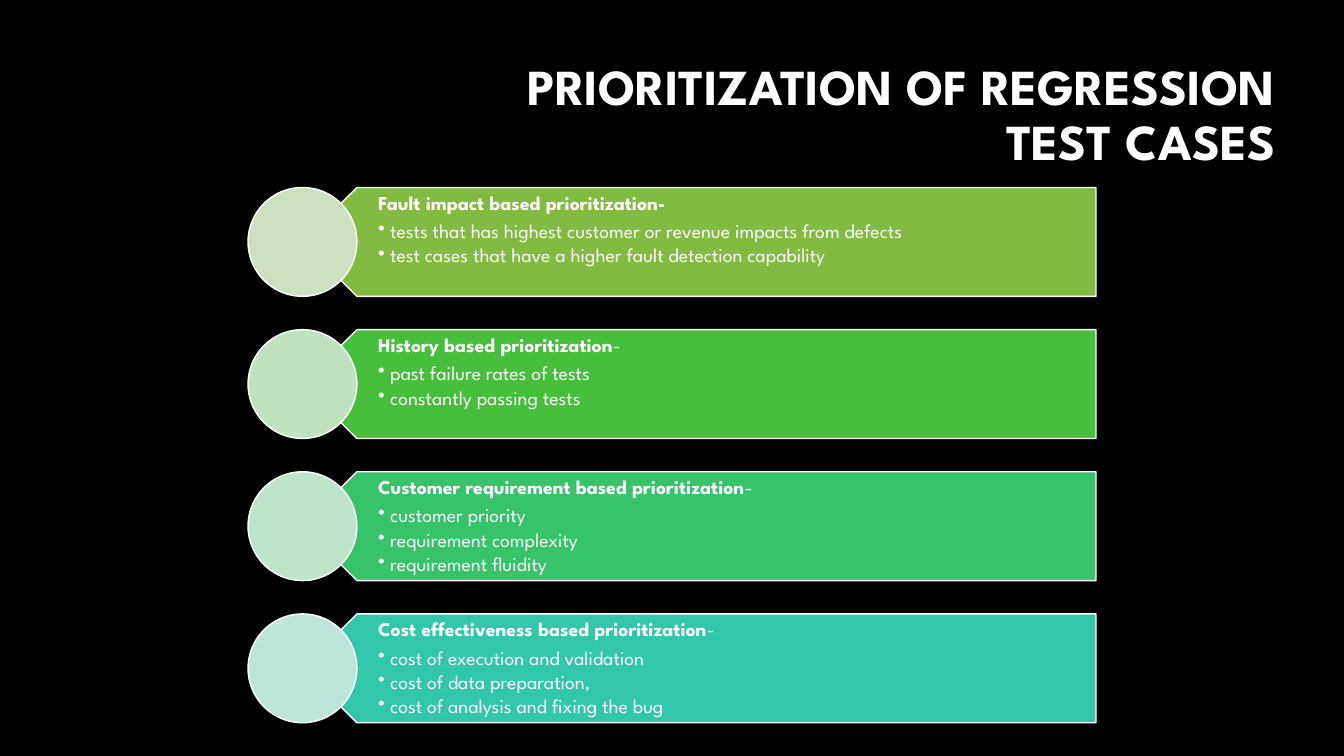
from lxml.etree import SubElement
from pptx import Presentation
from pptx.dml.color import RGBColor
from pptx.enum.shapes import MSO_SHAPE as Shape
from pptx.enum.text import MSO_ANCHOR as Anchor, PP_ALIGN as Align
from pptx.oxml.ns import qn
from pptx.util import Inches, Pt

FONT = "League Spartan"
WHITE = "FFFFFF"
FIRST_ROW, ROW_PITCH, ROW_HEIGHT = 1.86, 1.41, 1.08
CIRCLE_LEFT = 2.46
BAND_LEFT, BAND_RIGHT = CIRCLE_LEFT + ROW_HEIGHT / 2, 10.87
TEXT_LEFT = 3.27

STRATEGIES = [
    ("81BB42", "CDE0C0", ("Fault impact based prioritization-", ""), [
        "tests that has highest customer or revenue impacts from defects",
        "test cases that have a higher fault detection capability"]),
    ("47BF3D", "C0E2C0", ("History based prioritization", "-"), [
        "past failure rates of tests",
        "constantly passing tests"]),
    ("37C369", "BFE4CC", ("Customer requirement based prioritization", "-"), [
        "customer priority",
        "requirement complexity",
        "requirement fluidity"]),
    ("32C7A9", "BEE5DA", ("Cost effectiveness based prioritization", "-"), [
        "cost of execution and validation",
        "cost of data preparation,",
        "cost of analysis and fixing the bug"]),
]


def paint(fill, color):
    fill.solid()
    fill.fore_color.rgb = RGBColor.from_string(color)


def add_outlined(slide, kind, left, top, width, color):
    outlined = slide.shapes.add_shape(
        kind, Inches(left), Inches(top), Inches(width), Inches(ROW_HEIGHT))
    outlined.shadow.inherit = False
    paint(outlined.fill, color)
    paint(outlined.line.fill, WHITE)
    outlined.line.width = Pt(1)
    return outlined


def add_text_frame(slide, left, top, width, height, insets, anchor):
    box = slide.shapes.add_textbox(*map(Inches, (left, top, width, height)))
    frame = box.text_frame
    frame.word_wrap = True
    frame.vertical_anchor = anchor
    (frame.margin_left, frame.margin_top,
     frame.margin_right, frame.margin_bottom) = map(Inches, insets)
    return frame


def style_run(run, size, bold):
    run.font.name = FONT
    run.font.size = Pt(size)
    run.font.bold = bold
    paint(run.font.fill, WHITE)


def add_bullet(paragraph):
    paragraph.level = 1
    properties = paragraph._p.get_or_add_pPr()
    properties.set("marL", str(Inches(0.12)))
    properties.set("indent", str(-Inches(0.12)))
    SubElement(properties, qn("a:buChar")).set("char", "•")


def add_title(slide, wording):
    frame = add_text_frame(slide, 3.33, 0.72, 9.42, 1.41,
                           (1.4, 0.05, 0.1, 0.58), Anchor.MIDDLE)
    title = frame.paragraphs[0]
    title.text = wording
    title.alignment = Align.RIGHT
    title.line_spacing = 0.9
    style_run(title.runs[0], 36, True)


def add_details(slide, top, heading, points):
    frame = add_text_frame(slide, TEXT_LEFT, top, BAND_RIGHT - TEXT_LEFT,
                           ROW_HEIGHT, (0.48, 0.06, 0.11, 0.06), Anchor.TOP)
    name, dash = heading
    frame.text = "\n".join([name, *points])
    for index, paragraph in enumerate(frame.paragraphs):
        is_heading = index == 0
        paragraph.line_spacing = 0.9
        paragraph.space_after = Pt(5 if is_heading else 2.2)
        if not is_heading:
            add_bullet(paragraph)
        style_run(paragraph.runs[0], 14, is_heading)
    if dash:
        dash_run = frame.paragraphs[0].add_run()
        dash_run.text = dash
        style_run(dash_run, 14, False)


def add_strategy(slide, row, band_color, circle_color, heading, points):
    top = FIRST_ROW + row * ROW_PITCH
    band = add_outlined(slide, Shape.PENTAGON, BAND_LEFT, top,
                        BAND_RIGHT - BAND_LEFT, band_color)
    band.rotation = 180
    add_details(slide, top, heading, points)
    add_outlined(slide, Shape.OVAL, CIRCLE_LEFT, top, ROW_HEIGHT, circle_color)


def main():
    deck = Presentation()
    deck.slide_width, deck.slide_height = Inches(13.33), Inches(7.5)
    slide = deck.slides.add_slide(deck.slide_layouts[6])
    paint(slide.background.fill, "000000")
    add_title(slide, "PRIORITIZATION OF REGRESSION TEST CASES")
    for row, strategy in enumerate(STRATEGIES):
        add_strategy(slide, row, *strategy)
    deck.save("out.pptx")


if __name__ == "__main__":
    main()
